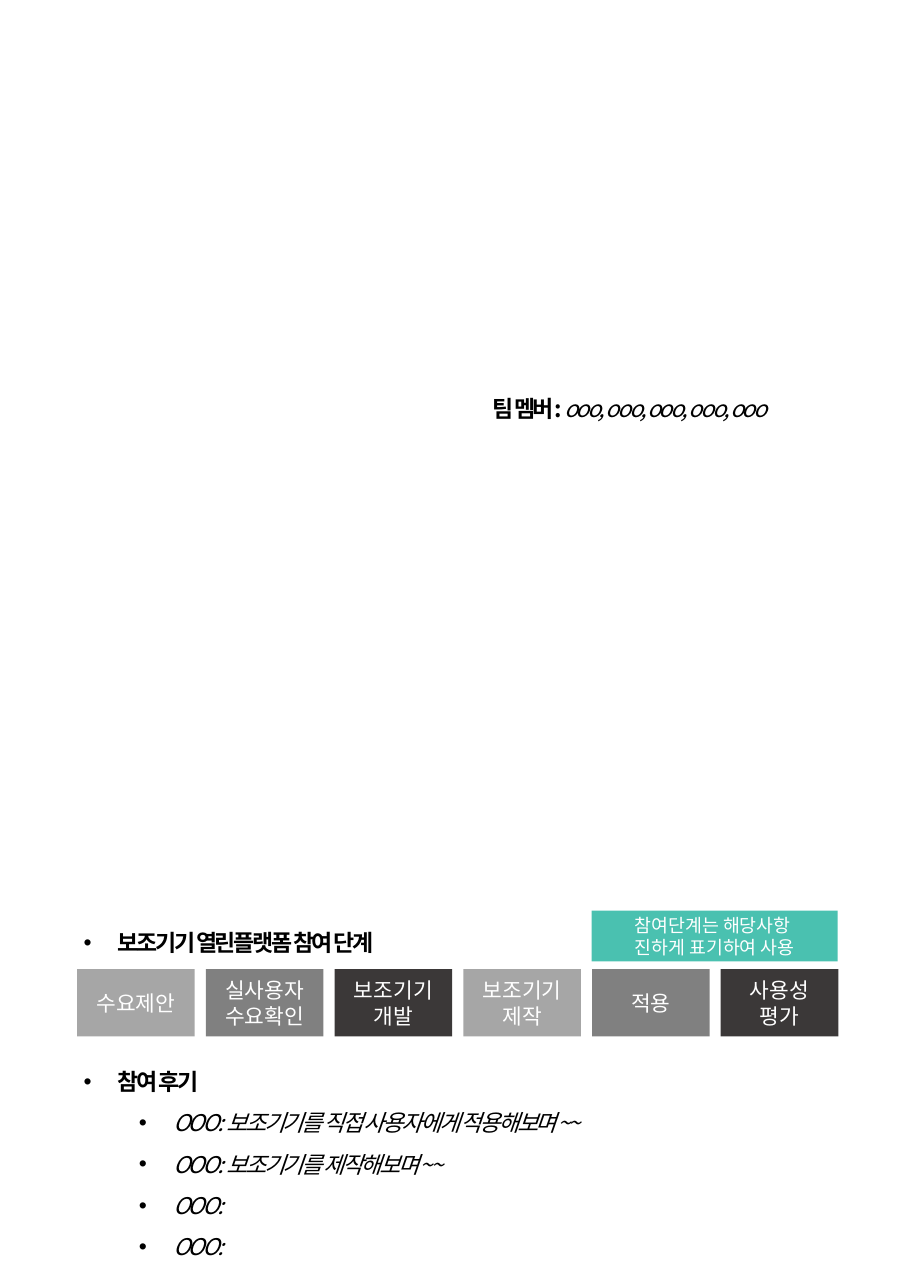
"""Build the portrait page with team members, participation stages and reviews."""
from lxml import etree
from pptx import Presentation
from pptx.dml.color import RGBColor
from pptx.enum import shapes, text
from pptx.oxml.ns import qn
from pptx.util import Cm, Pt

FONT = "Noto Sans CJK KR"


def paint(target, color):
    if hasattr(target, "solid"):
        target.solid()
        target.fore_color.rgb = RGBColor.from_string(color)
    else:
        target.color.rgb = RGBColor.from_string(color)


def add_text(s, box, paragraphs):
    tf = s.shapes.add_textbox(*[Cm(v) for v in box]).text_frame
    tf.word_wrap = True
    for i, (level, runs) in enumerate(paragraphs):
        p = tf.paragraphs[0] if i == 0 else tf.add_paragraph()
        p.line_spacing = 1.5
        if level is not None:
            p.level = level
            pPr = p._p.get_or_add_pPr()
            pPr.set("marL", str(Cm(0.79 + 1.27 * level)))
            pPr.set("indent", str(Cm(-0.79)))
            etree.SubElement(pPr, qn("a:buFont"), typeface="Arial")
            etree.SubElement(pPr, qn("a:buChar"), char="•")
        for words, bold in runs:
            r = p.add_run()
            r.text = words
            r.font.size, r.font.name = Pt(15), FONT
            r.font.bold, r.font.italic = bold, not bold
            paint(r.font, "000000")
            rPr = r._r.get_or_add_rPr()
            rPr.set("spc", "-150")
            etree.SubElement(rPr, qn("a:ea"), typeface=FONT)


prs = Presentation()
prs.slide_width, prs.slide_height = Cm(21), Cm(29.7)
s = prs.slides.add_slide(prs.slide_layouts[6])

reviews = ["OOO: 보조기기를 직접 사용자에게 적용해보며~~", "OOO: 보조기기를 제작해보며~~", "OOO:", "OOO:"]
add_text(s, (1.68, 24.18, 13.74, 4.95),
         [(0, [("참여 후기", True)])] + [(1, [(review, False)]) for review in reviews])
add_text(s, (1.68, 20.98, 17.3, 1.12), [(0, [("보조기기 열린플랫폼 참여 단계", True)])])
add_text(s, (11.1, 8.66, 7.44, 1.12),
         [(None, [("팀 멤버: ", True), ("ooo, ooo, ooo, ooo, ooo", False)])])

stages = ["수요제안", "실사용자\n수요확인", "보조기기\n개발", "보조기기\n제작", "적용", "사용성\n평가"]
grays = ["A6A6A6", "808080", "3B3838"]
blocks = [((13.64, 21, 5.67, 1.17), "4AC1B0", 12, "참여단계는 해당사항 \n진하게 표기하여 사용")]
for i, stage in enumerate(stages):
    blocks.append(((1.78 + 2.967 * i, 22.35, 2.71, 1.55), grays[i % 3], 14, stage))

for box, color, size, words in blocks:
    sp = s.shapes.add_shape(shapes.MSO_SHAPE.RECTANGLE, *[Cm(v) for v in box])
    sp.shadow.inherit = False
    paint(sp.fill, color)
    sp.line.fill.background()
    tf = sp.text_frame
    tf.text = words
    tf.word_wrap = True
    tf.vertical_anchor = text.MSO_ANCHOR.MIDDLE
    for p in tf.paragraphs:
        p.alignment = text.PP_ALIGN.CENTER
        for r in p.runs:
            r.font.size, r.font.name = Pt(size), "Calibri"
            paint(r.font, "FFFFFF")

prs.save("out.pptx")
